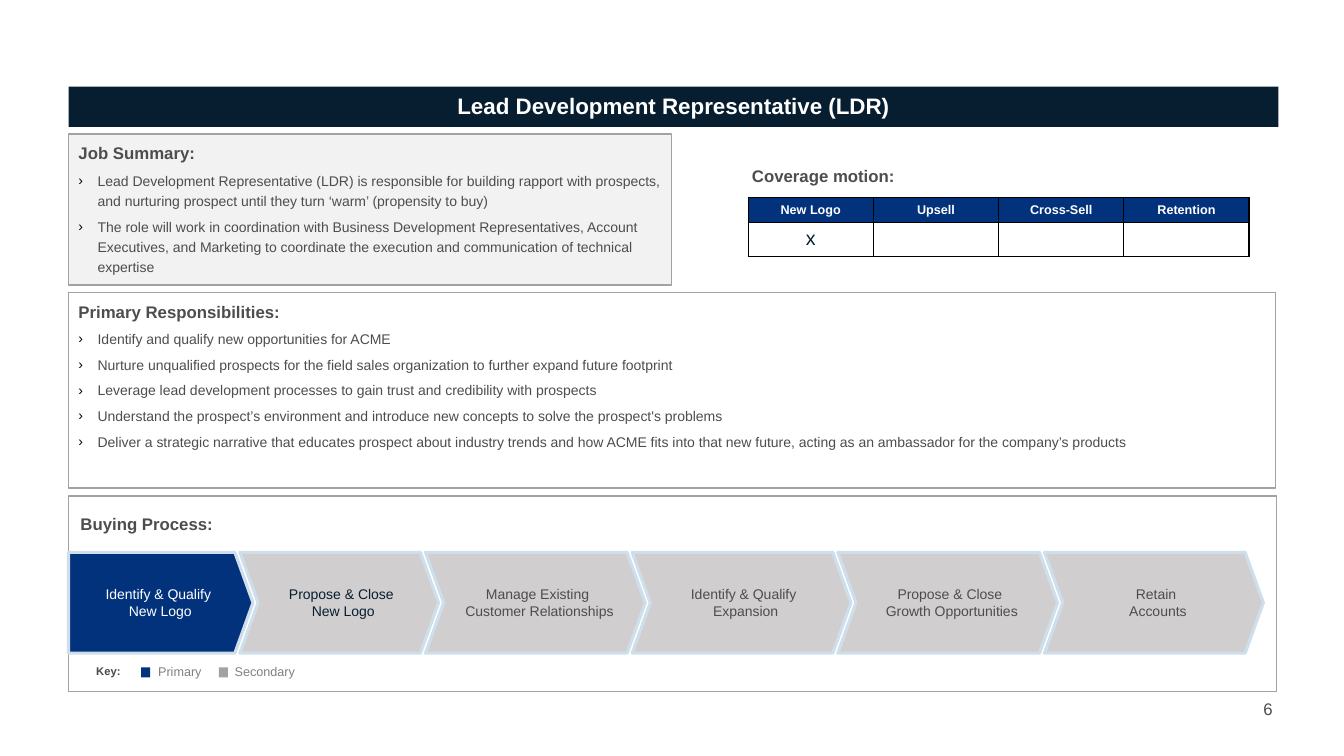
"""Build the Lead Development Representative role slide."""
from dataclasses import dataclass
from typing import Any, Optional

from lxml.etree import SubElement
from pptx import Presentation
from pptx.dml.color import RGBColor
from pptx.enum.shapes import MSO_SHAPE
from pptx.enum.text import MSO_ANCHOR, PP_ALIGN
from pptx.oxml.ns import qn
from pptx.util import Inches, Pt

COLORS = {
    "navy": "071E31", "blue": "03327C", "pale_blue": "CEDFEB",
    "panel": "F2F2F2", "white": "FFFFFF", "black": "000000",
    "step": "D0CECE", "border": "9FA49F", "text": "4D4D4D",
    "key": "4C4846", "legend": "7F7F7F",
}
STANDARD_INSETS = (0.1, 0.05, 0.1, 0.05)
NO_INSETS = (0, 0, 0, 0)
STEP_INSETS = (0.08, 0.12, 0, 0.12)
LEFT_EDGE = 0.68
STEP_TOP, STEP_HEIGHT, STEP_OVERLAP = 5.48, 1, 0.13
LEGEND_TOP = 6.54
BULLET_INDENT = 0.19


@dataclass(frozen=True)
class TextStyle:
    size: float
    color: str = "text"
    bold: bool = False
    align: PP_ALIGN = PP_ALIGN.LEFT


@dataclass(frozen=True)
class Area:
    left: float
    top: float
    width: float
    height: float

    def lengths(self) -> list[int]:
        return [Inches(value) for value in (self.left, self.top, self.width, self.height)]


@dataclass(frozen=True)
class Panel:
    area: Area
    fill: str
    heading: str
    bullets: tuple[str, ...]


@dataclass(frozen=True)
class Step:
    width: float
    lines: tuple[str, ...]
    fill: str = "step"
    color: str = "text"
    outline: MSO_SHAPE = MSO_SHAPE.CHEVRON


@dataclass(frozen=True)
class Label:
    area: Area
    text: str
    style: TextStyle
    insets: tuple[float, ...] = STANDARD_INSETS
    anchor: MSO_ANCHOR = MSO_ANCHOR.TOP


HEADING = TextStyle(12, bold=True)
BODY = TextStyle(10)
TITLE = TextStyle(16, "white", True, PP_ALIGN.CENTER)
TABLE_HEADER = TextStyle(9, "white", True, PP_ALIGN.CENTER)
TABLE_MARK = TextStyle(14, "navy", align=PP_ALIGN.CENTER)

PANELS = (
    Panel(Area(LEFT_EDGE, 1.33, 5.98, 1.5), "panel", "Job Summary:", (
        "Lead Development Representative (LDR) is responsible for building rapport with prospects, and nurturing prospect until they turn ‘warm’ (propensity to buy)",
        "The role will work in coordination with Business Development Representatives, Account Executives, and Marketing to coordinate the execution and communication of technical expertise",
    )),
    Panel(Area(LEFT_EDGE, 2.9, 11.97, 1.94), "white", "Primary Responsibilities:", (
        "Identify and qualify new opportunities for ACME",
        "Nurture unqualified prospects for the field sales organization to further expand future footprint",
        "Leverage lead development processes to gain trust and credibility with prospects",
        "Understand the prospect’s environment and introduce new concepts to solve the prospect's problems",
        "Deliver a strategic narrative that educates prospect about industry trends and how ACME fits into that new future, acting as an ambassador for the company’s products",
    )),
)
STEPS = (
    Step(1.83, ("Identify & Qualify \vNew Logo",), "blue", "white", MSO_SHAPE.PENTAGON),
    Step(1.97, ("Propose & Close \vNew Logo",), color="navy"),
    Step(2.18, ("Manage Existing \vCustomer Relationships",)),
    Step(2.17, ("Identify & Qualify \vExpansion",)),
    Step(2.18, ("Propose & Close \vGrowth Opportunities",)),
    Step(2.17, ("Retain ", "Accounts")),
)
LABELS = (
    Label(Area(0.7, 5.05, 3.36, 0.3), "Buying Process:", HEADING),
    Label(Area(7.36, 1.6, 2.34, 0.3), "Coverage motion:", HEADING),
    Label(Area(LEFT_EDGE, LEGEND_TOP, 0.79, 0.24), "Key:",
          TextStyle(8, "key", True, PP_ALIGN.CENTER)),
    Label(Area(1.47, LEGEND_TOP, 0.75, 0.25), "Primary", TextStyle(9, "legend")),
    Label(Area(2.23, LEGEND_TOP, 0.96, 0.25), "Secondary", TextStyle(9, "legend")),
    Label(Area(12.53, 6.93, 0.34, 0.2), "6", TextStyle(12), NO_INSETS, MSO_ANCHOR.MIDDLE),
)
LEGEND_MARKS = ((1.4, "blue"), (2.17, "border"))
MOTIONS = ("New Logo", "Upsell", "Cross-Sell", "Retention")


def rgb(name: str) -> RGBColor:
    return RGBColor.from_string(COLORS[name])


def set_values(target: Any, values: dict[str, Any]) -> None:
    for name, value in values.items():
        setattr(target, name, value)


def prepare_frame(frame: Any, insets: tuple[float, ...], anchor: MSO_ANCHOR) -> None:
    sides = ("margin_left", "margin_top", "margin_right", "margin_bottom")
    set_values(frame, {"word_wrap": True, "vertical_anchor": anchor})
    set_values(frame, dict(zip(sides, map(Inches, insets))))


def write_paragraph(para: Any, text: str, style: TextStyle) -> None:
    para.text = text
    para.alignment = style.align
    for line_break in para._p.findall(qn("a:br")):
        SubElement(line_break, qn("a:rPr"), sz=str(style.size * 100))
    for span in para.runs:
        set_values(span.font, {"name": "Arial", "size": Pt(style.size), "bold": style.bold})
        span.font.color.rgb = rgb(style.color)


def add_bullet(para: Any) -> None:
    properties = para._p.get_or_add_pPr()
    indent = Inches(BULLET_INDENT)
    properties.set("marL", str(indent))
    properties.set("indent", str(-indent))
    SubElement(SubElement(properties, qn("a:buClr")), qn("a:srgbClr"), val=COLORS["black"])
    SubElement(properties, qn("a:buFont"), typeface="Arial")
    SubElement(properties, qn("a:buChar"), char="›")


def draw_shape(page: Any, area: Area, fill: Optional[str], line: Optional[str] = None,
               line_width: float = 1, outline: MSO_SHAPE = MSO_SHAPE.RECTANGLE) -> Any:
    box = page.shapes.add_shape(outline, *area.lengths())
    box.shadow.inherit = False
    if fill:
        box.fill.solid()
        box.fill.fore_color.rgb = rgb(fill)
    else:
        box.fill.background()
    if line:
        box.line.color.rgb = rgb(line)
        box.line.width = Pt(line_width)
    else:
        box.line.fill.background()
    return box


def draw_title(page: Any) -> None:
    frame = draw_shape(page, Area(LEFT_EDGE, 0.86, 12, 0.4), "navy").text_frame
    prepare_frame(frame, NO_INSETS, MSO_ANCHOR.MIDDLE)
    write_paragraph(frame.paragraphs[0], "Lead Development Representative (LDR)", TITLE)
    frame.paragraphs[0].line_spacing = 0.9


def draw_panel(page: Any, panel: Panel) -> None:
    frame = draw_shape(page, panel.area, panel.fill, "border").text_frame
    prepare_frame(frame, STANDARD_INSETS, MSO_ANCHOR.TOP)
    heading = frame.paragraphs[0]
    write_paragraph(heading, panel.heading, HEADING)
    set_values(heading, {"line_spacing": 1.2, "space_after": Pt(2)})
    for text in panel.bullets:
        para = frame.add_paragraph()
        set_values(para, {"line_spacing": 1.2, "space_before": Pt(2), "space_after": Pt(2)})
        add_bullet(para)
        write_paragraph(para, text, BODY)


def draw_label(page: Any, label: Label) -> None:
    frame = page.shapes.add_textbox(*label.area.lengths()).text_frame
    prepare_frame(frame, label.insets, label.anchor)
    write_paragraph(frame.paragraphs[0], label.text, label.style)


def draw_steps(page: Any) -> None:
    left = LEFT_EDGE
    for step in STEPS:
        area = Area(left, STEP_TOP, step.width, STEP_HEIGHT)
        box = draw_shape(page, area, step.fill, "pale_blue", 2.25, step.outline)
        box.adjustments[0] = 0.18
        frame = box.text_frame
        prepare_frame(frame, STEP_INSETS, MSO_ANCHOR.MIDDLE)
        for index, text in enumerate(step.lines):
            para = frame.add_paragraph() if index else frame.paragraphs[0]
            write_paragraph(para, text, TextStyle(10, step.color, align=PP_ALIGN.CENTER))
        left += step.width - STEP_OVERLAP


def border_cell(cell: Any) -> None:
    properties = cell._tc.get_or_add_tcPr()
    for index, side in enumerate(("a:lnL", "a:lnR", "a:lnT", "a:lnB")):
        line = properties.makeelement(qn(side), {"w": str(Pt(1))})
        SubElement(SubElement(line, qn("a:solidFill")), qn("a:srgbClr"), val=COLORS["black"])
        properties.insert(index, line)


def draw_coverage(page: Any) -> None:
    area = Area(7.42, 1.96, 4.97, 0.58)
    table = page.shapes.add_table(2, len(MOTIONS), *area.lengths()).table
    for row, height in zip(table.rows, (0.25, 0.33)):
        row.height = Inches(height)
    for column, motion in enumerate(MOTIONS):
        header, mark = table.cell(0, column), table.cell(1, column)
        write_paragraph(header.text_frame.paragraphs[0], motion, TABLE_HEADER)
        for cell, fill in ((header, "blue"), (mark, "white")):
            cell.fill.solid()
            cell.fill.fore_color.rgb = rgb(fill)
            border_cell(cell)
        if column:
            set_values(mark, {"margin_top": 0, "margin_bottom": 0})
    write_paragraph(table.cell(1, 0).text_frame.paragraphs[0], "x", TABLE_MARK)


def main() -> None:
    deck = Presentation()
    set_values(deck, {"slide_width": Inches(13.33), "slide_height": Inches(7.5)})
    page = deck.slides.add_slide(deck.slide_layouts[6])
    draw_title(page)
    for panel in PANELS:
        draw_panel(page, panel)
    draw_shape(page, Area(LEFT_EDGE, 4.92, 11.98, 1.94), None, "border")
    for left, fill in LEGEND_MARKS:
        draw_shape(page, Area(left, 6.62, 0.09, 0.1), fill)
    draw_steps(page)
    for label in LABELS:
        draw_label(page, label)
    draw_coverage(page)
    deck.save("out.pptx")


if __name__ == "__main__":
    main()
